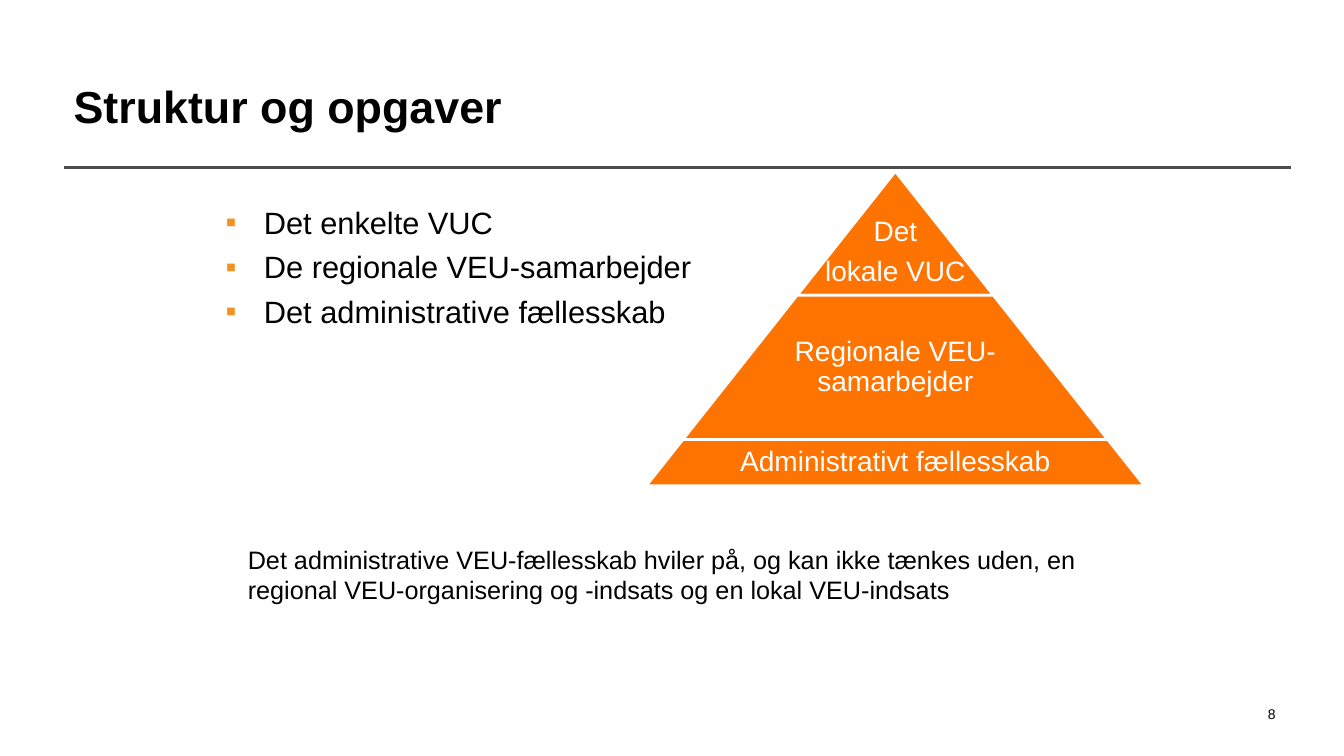
from lxml import etree
from pptx import Presentation
from pptx.dml.color import RGBColor
from pptx.enum.shapes import MSO_CONNECTOR, MSO_SHAPE
from pptx.enum.text import MSO_ANCHOR, PP_ALIGN
from pptx.oxml.ns import qn
from pptx.util import Inches, Pt

TRAPEZOID = MSO_SHAPE.TRAPEZOID
STRAIGHT = MSO_CONNECTOR.STRAIGHT
TOP, MIDDLE, BOTTOM = MSO_ANCHOR.TOP, MSO_ANCHOR.MIDDLE, MSO_ANCHOR.BOTTOM
LEFT, CENTER, RIGHT = PP_ALIGN.LEFT, PP_ALIGN.CENTER, PP_ALIGN.RIGHT

BLACK, WHITE, GRAY, ORANGE, BULLET = "000000", "FFFFFF", "4D4D4D", "FF7300", "F39221"
APEX_X, APEX_Y, SLOPE = 8.88, 1.7, 0.792
LEVELS = [
    (["Det", "lokale VUC"], 1.23, 1.95, BOTTOM, 0.08),
    (["Regionale VEU-samarbejder"], 1.43, 2.74, MIDDLE, 0.03),
    (["Administrativt fællesskab"], 0.46, 3.21, MIDDLE, 0.03),
]


def rgb(value):
    return RGBColor.from_string(value)


def write(p, text, size, color=BLACK, bold=False):
    r = p.add_run()
    r.text = text
    r.font.name = "Arial"
    r.font.size = Pt(size)
    r.font.bold = bold
    r.font.color.rgb = rgb(color)


def place(shape, left, top, width, height):
    shape.left, shape.top = Inches(left), Inches(top)
    shape.width, shape.height = Inches(width), Inches(height)


def add_title(s, text):
    title = s.shapes.title
    place(title, 0.63, 0.51, 10.4, 1.08)
    tf = title.text_frame
    tf.vertical_anchor = MIDDLE
    p = tf.paragraphs[0]
    p.alignment = LEFT
    write(p, text, 32, bold=True)


def add_rule(s):
    line = s.shapes.add_connector(STRAIGHT, Inches(0.63), Inches(1.66), Inches(12.8), Inches(1.66))
    line.line.color.rgb = rgb(GRAY)
    line.line.width = Pt(2.25)
    etree.SubElement(line._element.spPr, qn("a:effectLst"))


def add_text(s, box, lines, size, color=BLACK, align=LEFT, anchor=TOP):
    tf = s.shapes.add_textbox(*map(Inches, box)).text_frame
    tf.word_wrap = True
    tf.vertical_anchor = anchor
    for i, text in enumerate(lines):
        p = tf.add_paragraph() if i else tf.paragraphs[0]
        p.alignment = align
        write(p, text, size, color)
    return tf


def add_bullets(tf, indent):
    for i, p in enumerate(tf.paragraphs):
        pPr = p._p.get_or_add_pPr()
        pPr.set("marL", str(Inches(indent)))
        pPr.set("indent", str(-Inches(indent)))
        color = etree.SubElement(pPr, qn("a:buClr"))
        etree.SubElement(color, qn("a:srgbClr"), val=BULLET)
        etree.SubElement(pPr, qn("a:buFont"), typeface="Arial")
        etree.SubElement(pPr, qn("a:buChar"), char="▪")
        if i:
            p.space_before = Pt(5.4)


def add_level(s, depth, lines, height, text_width, anchor, margin):
    top = APEX_Y + depth
    half = SLOPE * (depth + height)
    box = (APEX_X - half, top, 2 * half, height)
    level = s.shapes.add_shape(TRAPEZOID, *map(Inches, box))
    level.adjustments[0] = SLOPE
    level.shadow.inherit = False
    level.fill.solid()
    level.fill.fore_color.rgb = rgb(ORANGE)
    level.line.color.rgb = rgb(WHITE)
    level.line.width = Pt(2)

    text_box = (APEX_X - text_width / 2, top, text_width, height)
    tf = add_text(s, text_box, lines, 20, WHITE, CENTER, anchor)
    tf.margin_left = tf.margin_right = Inches(0.03)
    tf.margin_top = tf.margin_bottom = Inches(margin)
    for p in tf.paragraphs:
        p.line_spacing = 0.9
    for p in tf.paragraphs[:-1]:
        p.space_after = Pt(7)


def add_pyramid(s):
    depth = 0
    for lines, height, text_width, anchor, margin in LEVELS:
        add_level(s, depth, lines, height, text_width, anchor, margin)
        depth += height


def main():
    prs = Presentation()
    prs.slide_width, prs.slide_height = Inches(13.33), Inches(7.5)
    s = prs.slides.add_slide(prs.slide_layouts[5])
    add_rule(s)
    add_title(s, "Struktur og opgaver")
    topics = ["Det enkelte VUC", "De regionale VEU-samarbejder", "Det administrative fællesskab"]
    add_bullets(add_text(s, (2.14, 1.97, 4.86, 2.82), topics, 22), 0.38)
    add_pyramid(s)
    conclusion = (
        "Det administrative VEU-fællesskab hviler på, og kan ikke tænkes uden, "
        "en regional VEU-organisering og -indsats og en lokal VEU-indsats"
    )
    add_text(s, (2.36, 5.35, 8.87, 1.01), [conclusion], 18)
    add_text(s, (6.49, 6.95, 6.26, 0.2), ["8"], 10, align=RIGHT)
    prs.save("out.pptx")


if __name__ == "__main__":
    main()
